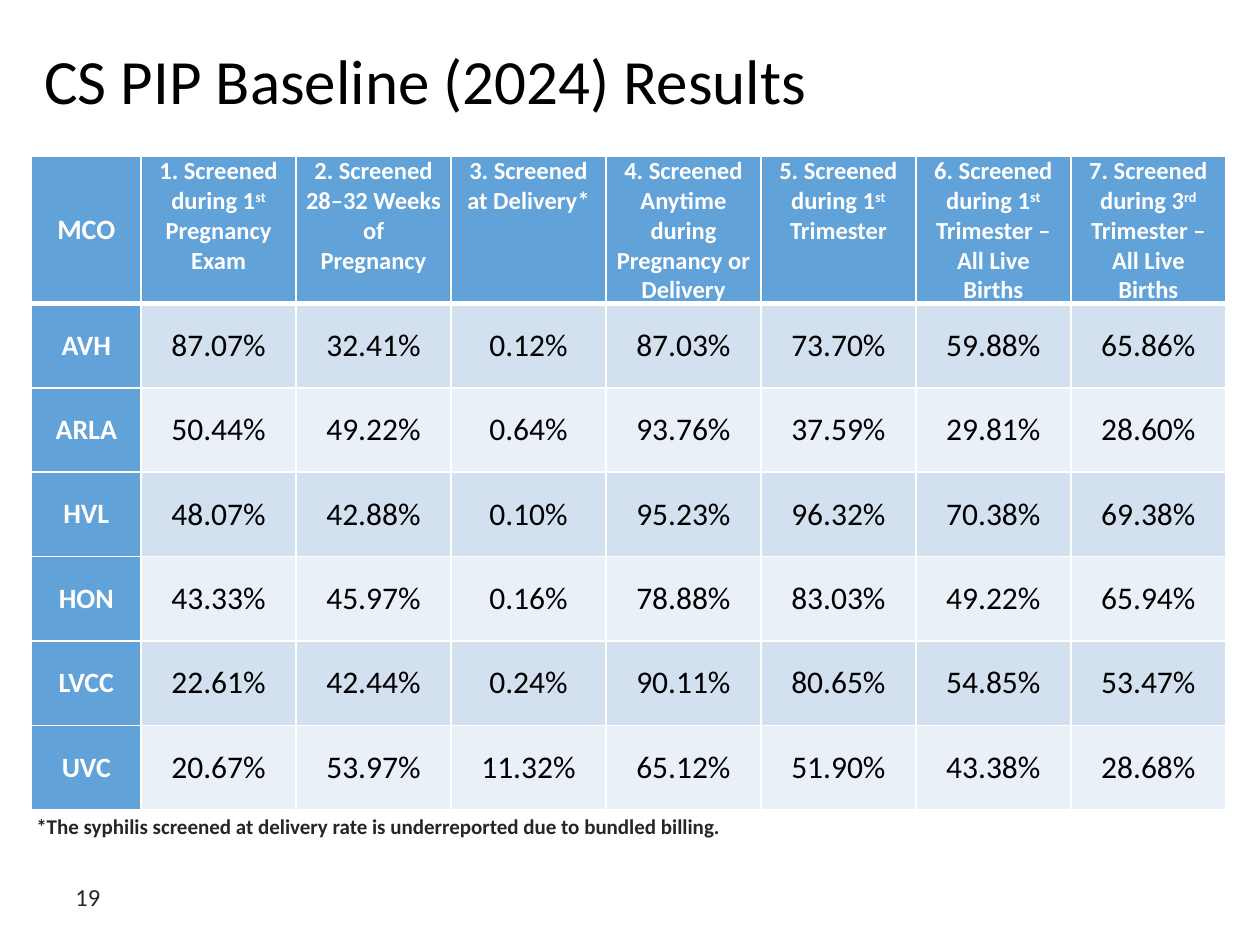
from lxml import etree
from pptx import Presentation
from pptx.dml.color import RGBColor
from pptx.enum.text import MSO_ANCHOR, PP_ALIGN
from pptx.oxml.ns import qn
from pptx.util import Inches, Pt

MIDDLE, TOP = MSO_ANCHOR.MIDDLE, MSO_ANCHOR.TOP
LEFT, CENTER = PP_ALIGN.LEFT, PP_ALIGN.CENTER
WHITE = RGBColor(0xFF, 0xFF, 0xFF)
BLACK = RGBColor(0x00, 0x00, 0x00)
GRAY = RGBColor(0x26, 0x26, 0x26)
BLUE = RGBColor(0x61, 0xA2, 0xD8)
BANDS = [RGBColor(0xD2, 0xE0, 0xF0), RGBColor(0xEA, 0xF0, 0xF8)]

HEADERS = [
    ["MCO"],
    ["1. Screened during 1", "st", " Pregnancy Exam"],
    ["2. Screened 28–32 Weeks of", "\n", "Pregnancy"],
    ["3. Screened at Delivery*"],
    ["4. Screened Anytime during Pregnancy or Delivery"],
    ["5. Screened during 1", "st", " Trimester"],
    ["6. Screened during 1", "st", " Trimester – All Live Births"],
    ["7. Screened during 3", "rd", " Trimester – All Live Births"],
]
RESULTS = [
    ("AVH", "87.07%", "32.41%", "0.12%", "87.03%", "73.70%", "59.88%", "65.86%"),
    ("ARLA", "50.44%", "49.22%", "0.64%", "93.76%", "37.59%", "29.81%", "28.60%"),
    ("HVL", "48.07%", "42.88%", "0.10%", "95.23%", "96.32%", "70.38%", "69.38%"),
    ("HON", "43.33%", "45.97%", "0.16%", "78.88%", "83.03%", "49.22%", "65.94%"),
    ("LVCC", "22.61%", "42.44%", "0.24%", "90.11%", "80.65%", "54.85%", "53.47%"),
    ("UVC", "20.67%", "53.97%", "11.32%", "65.12%", "51.90%", "43.38%", "28.68%"),
]


def write(p, parts, size, color, bold=False, align=LEFT, space=0):
    p.alignment = align
    p.space_before = p.space_after = Pt(space)
    for part in parts:
        if part == "\n":
            p.add_line_break()
            continue
        r = p.add_run()
        r.text = part
        r.font.name = "Calibri"
        r.font.size = Pt(size)
        r.font.bold = bold
        r.font.color.rgb = color
        if part in ("st", "rd"):
            r.font._element.set("baseline", "30000")


def style_cell(cell, fill, anchor, bottom):
    cell.margin_left = cell.margin_right = Inches(0.07)
    cell.margin_top = cell.margin_bottom = 0
    cell.vertical_anchor = anchor
    tc_pr = cell._tc.get_or_add_tcPr()
    for side, width in (("lnL", 1), ("lnR", 1), ("lnT", 1), ("lnB", bottom)):
        ln = etree.SubElement(tc_pr, qn(f"a:{side}"), w=str(Pt(width)))
        solid = etree.SubElement(ln, qn("a:solidFill"))
        etree.SubElement(solid, qn("a:srgbClr"), val=str(WHITE))
    cell.fill.solid()
    cell.fill.fore_color.rgb = fill


prs = Presentation()
prs.slide_width, prs.slide_height = Inches(10), Inches(7.5)
s = prs.slides.add_slide(prs.slide_layouts[5])

title = s.shapes.title
title.left, title.top = Inches(0.25), Inches(0)
title.width, title.height = Inches(9.5), Inches(1.17)
tf = title.text_frame
tf.margin_left = tf.margin_right = 0
tf.vertical_anchor = MIDDLE
p = tf.paragraphs[0]
write(p, ["CS PIP Baseline (2024) Results"], 36, BLACK, space=2)
p.line_spacing = 1.15
p._p.get_or_add_pPr().set("marL", str(Inches(0.1)))

number = s.shapes.add_textbox(Inches(0.5), Inches(6.83), Inches(0.83), Inches(0.58))
tf = number.text_frame
tf.word_wrap = True
tf.vertical_anchor = MIDDLE
write(tf.paragraphs[0], ["19"], 14, GRAY)

table = s.shapes.add_table(len(RESULTS) + 1, len(HEADERS), Inches(0.25), Inches(1.24),
                           Inches(9.5), Inches(5.17)).table
for i, column in enumerate(table.columns):
    column.width = Inches(1.23 if i else 0.87)
for i, row in enumerate(table.rows):
    row.height = Inches(0.67 if i else 1.14)

for col, parts in enumerate(HEADERS):
    cell = table.cell(0, col)
    style_cell(cell, BLUE, TOP if col else MIDDLE, 3)
    write(cell.text_frame.paragraphs[0], parts, 14 if col else 16, WHITE, True, CENTER)

for row, values in enumerate(RESULTS, 1):
    for col, value in enumerate(values):
        cell = table.cell(row, col)
        style_cell(cell, BANDS[(row - 1) % 2] if col else BLUE, MIDDLE, 1)
        if row == 1:
            cell._tc.tcPr.find(qn("a:lnT")).set("w", str(Pt(3)))
        write(cell.text_frame.paragraphs[0], [value], 18 if col else 16,
              BLACK if col else WHITE, col == 0, CENTER, 2)

note = s.shapes.add_textbox(Inches(0.19), Inches(6.41), Inches(8.33), Inches(0.43))
tf = note.text_frame
tf.word_wrap = True
write(tf.paragraphs[0],
      ["*The syphilis screened at delivery rate is underreported due to bundled billing."],
      12, GRAY, True)

prs.save("out.pptx")
